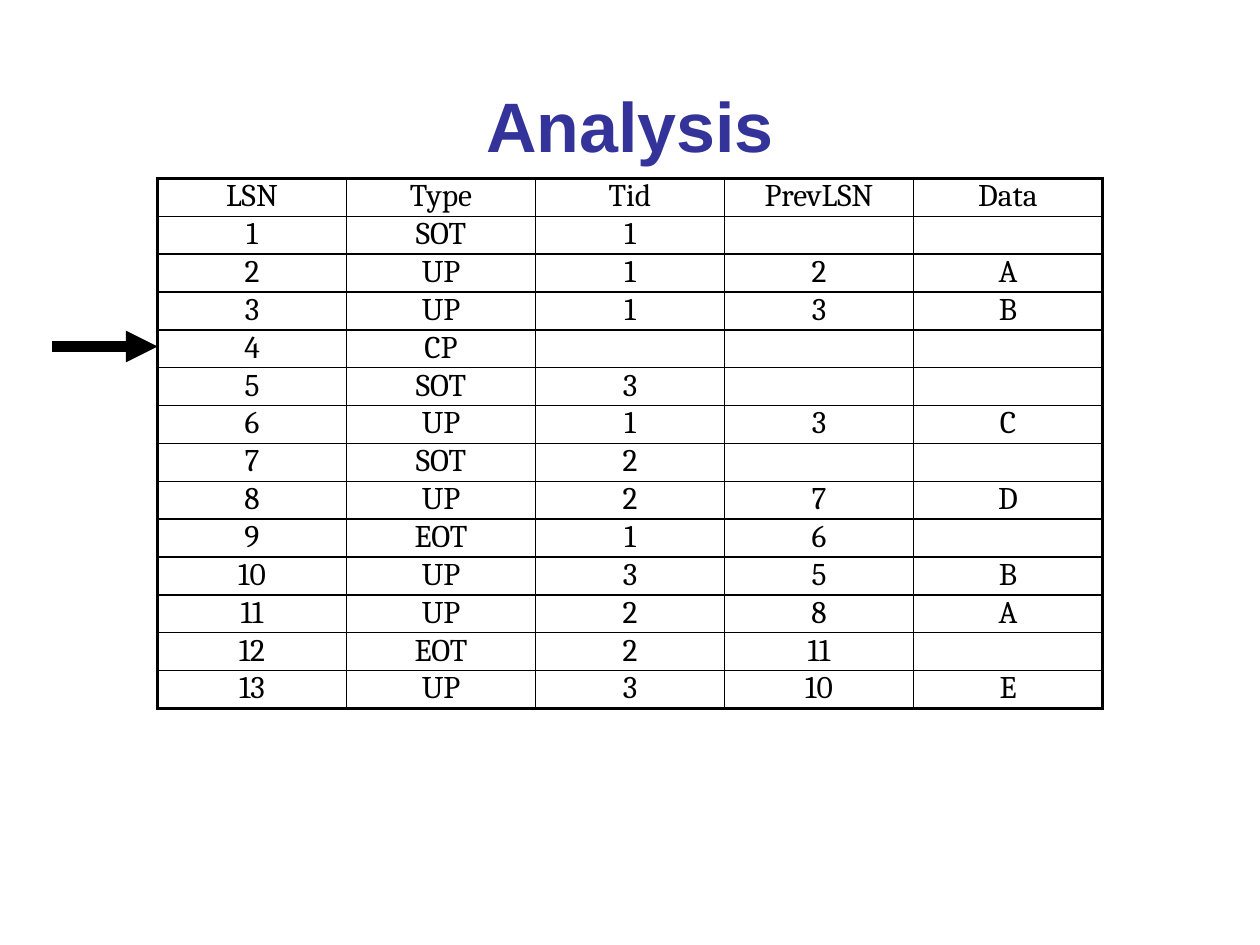
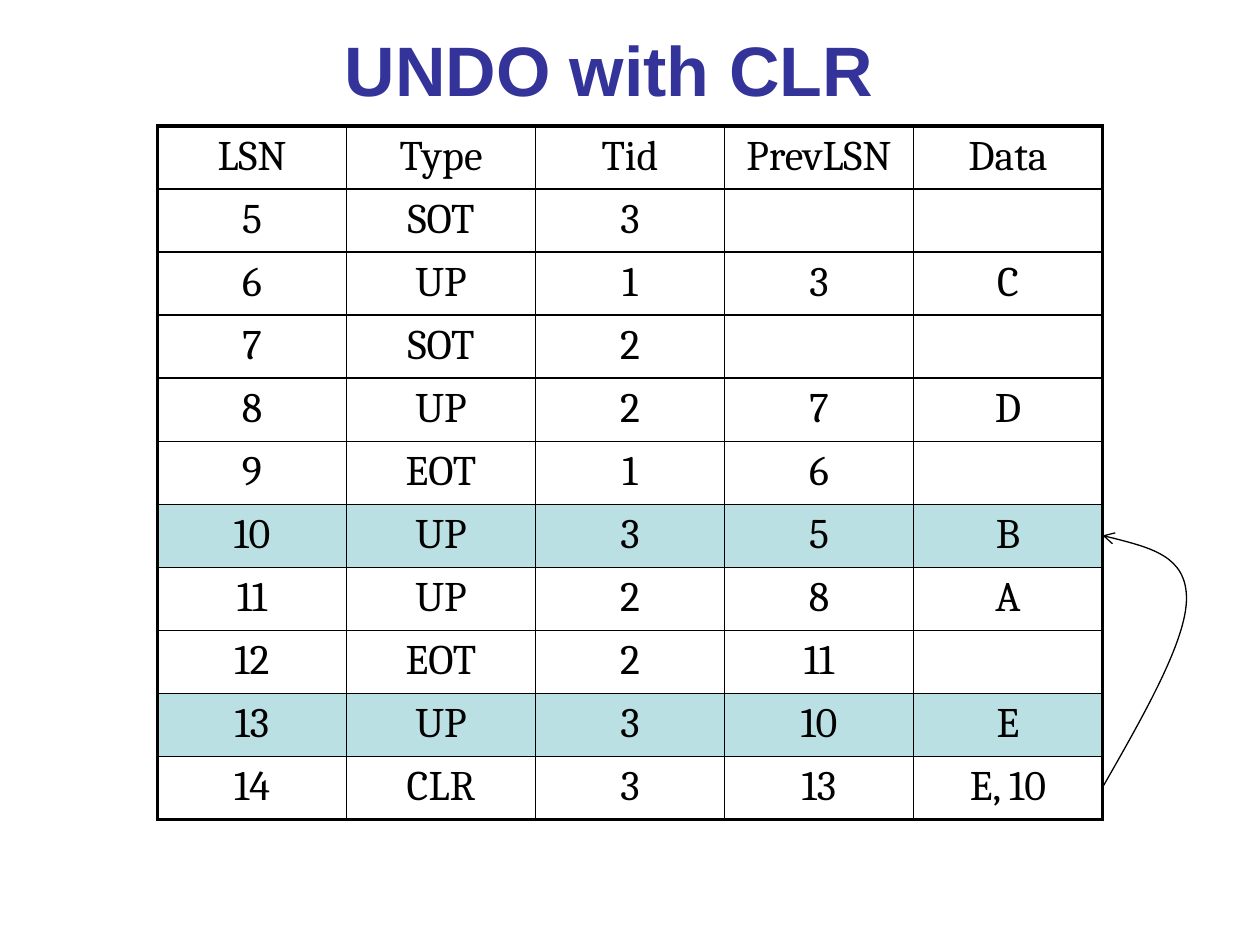
from lxml import etree
from pptx import Presentation
from pptx.dml.color import RGBColor
from pptx.enum.shapes import MSO_CONNECTOR
from pptx.enum.text import MSO_ANCHOR, PP_ALIGN
from pptx.oxml.ns import qn
from pptx.util import Pt

HEADER = ("LSN", "Type", "Tid", "PrevLSN", "Data")
LOG = [
    ("1", "SOT", "1", "", ""),
    ("2", "UP", "1", "2", "A"),
    ("3", "UP", "1", "3", "B"),
    ("4", "CP", "", "", ""),
    ("5", "SOT", "3", "", ""),
    ("6", "UP", "1", "3", "C"),
    ("7", "SOT", "2", "", ""),
    ("8", "UP", "2", "7", "D"),
    ("9", "EOT", "1", "6", ""),
    ("10", "UP", "3", "5", "B"),
    ("11", "UP", "2", "8", "A"),
    ("12", "EOT", "2", "11", ""),
    ("13", "UP", "3", "10", "E"),
]
COMPENSATION = ("14", "CLR", "3", "13", "E, 10")
CHECKPOINT = "4"
UNDONE = {"10", "13"}

BLACK = RGBColor(0x00, 0x00, 0x00)
WHITE = RGBColor(0xFF, 0xFF, 0xFF)
INDIGO = RGBColor(0x33, 0x33, 0x99)
PALE_TEAL = RGBColor(0xBB, 0xE0, 0xE3)
FILLS = {**dict.fromkeys(UNDONE, PALE_TEAL), COMPENSATION[0]: WHITE}

STRAIGHT = MSO_CONNECTOR.STRAIGHT
CENTER, MIDDLE = PP_ALIGN.CENTER, MSO_ANCHOR.MIDDLE
TITLE_FONT, LOG_FONT = "Arial", "Cambria"
TABLE_LEFT, COLUMN_WIDTH = 90, 108
TABLE_RIGHT = TABLE_LEFT + COLUMN_WIDTH * len(HEADER)
INNER, OUTER = 1, 2.25


def add_title(slide, text, left, top):
    box = slide.shapes.add_textbox(Pt(left), Pt(top), Pt(612), Pt(78))
    frame = box.text_frame
    frame.word_wrap = True
    frame.vertical_anchor = MIDDLE
    paragraph = frame.paragraphs[0]
    paragraph.alignment = CENTER
    run = paragraph.add_run()
    run.text = text
    run.font.name, run.font.size, run.font.bold = TITLE_FONT, Pt(40), True
    run.font.color.rgb = INDIGO


def set_borders(cell, widths):
    properties = cell._tc.get_or_add_tcPr()
    for side, width in widths.items():
        border = etree.SubElement(properties, qn(f"a:ln{side}"), w=str(Pt(width)))
        solid = etree.SubElement(border, qn("a:solidFill"))
        etree.SubElement(solid, qn("a:srgbClr"), val=str(BLACK))


def write_cell(cell, text, size):
    paragraph = cell.text_frame.paragraphs[0]
    paragraph.alignment = CENTER
    if text:
        run = paragraph.add_run()
        run.text = text
        run.font.name, run.font.size = LOG_FONT, Pt(size)
        run.font.color.rgb = BLACK
    else:
        end = etree.SubElement(paragraph._p, qn("a:endParaRPr"), sz=str(size * 100))
        etree.SubElement(end, qn("a:latin"), typeface=LOG_FONT)


def add_log(slide, entries, top, row_height, size, margins, fills):
    rows = [HEADER, *entries]
    last_row, last_column = len(rows) - 1, len(HEADER) - 1
    table = slide.shapes.add_table(
        len(rows), len(HEADER), Pt(TABLE_LEFT), Pt(top),
        Pt(TABLE_RIGHT - TABLE_LEFT), Pt(row_height * len(rows))).table
    table.first_row = table.horz_banding = False
    for column in table.columns:
        column.width = Pt(COLUMN_WIDTH)
    for r, entry in enumerate(rows):
        table.rows[r].height = Pt(row_height)
        for c, text in enumerate(entry):
            cell = table.cell(r, c)
            side_margin, end_margin = margins
            cell.margin_left = cell.margin_right = Pt(side_margin)
            cell.margin_top = cell.margin_bottom = Pt(end_margin)
            set_borders(cell, {
                "L": INNER if c else OUTER,
                "R": OUTER if c == last_column else INNER,
                "T": INNER if r else OUTER,
                "B": OUTER if r == last_row else INNER,
            })
            if entry[0] in fills:
                cell.fill.solid()
                cell.fill.fore_color.rgb = fills[entry[0]]
            else:
                cell.fill.background()
            write_cell(cell, text, size)


def style_arrow(arrow, width, head):
    arrow.line.color.rgb = BLACK
    arrow.line.width = Pt(width)
    etree.SubElement(arrow.line._get_or_add_ln(), qn("a:tailEnd"), type=head)


def add_pointer(slide, y):
    pointer = slide.shapes.add_connector(STRAIGHT, Pt(30), Pt(y), Pt(TABLE_LEFT), Pt(y))
    style_arrow(pointer, 6, "triangle")
    etree.SubElement(pointer._element.spPr, qn("a:effectLst"))


def add_undo_curve(slide, start, controls):
    builder = slide.shapes.build_freeform(Pt(start[0]), Pt(start[1]))
    builder.add_line_segments([(Pt(x), Pt(y)) for x, y in controls], close=False)
    curve = builder.convert_to_shape()
    segments = list(curve._element.iter(qn("a:lnTo")))
    for first in range(0, len(segments), 3):
        trio = segments[first:first + 3]
        bezier = etree.Element(qn("a:cubicBezTo"))
        trio[0].addprevious(bezier)
        for segment in trio:
            bezier.append(segment[0])
            segment.getparent().remove(segment)
    curve.shadow.inherit = False
    curve.fill.background()
    style_arrow(curve, 0.75, "arrow")


def main():
    deck = Presentation()
    deck.slide_width, deck.slide_height = Pt(720), Pt(540)
    blank = deck.slide_layouts[6]

    analysis = deck.slides.add_slide(blank)
    add_title(analysis, "Analysis", 54, 32.4)
    top, row_height = 102, 21.6
    add_log(analysis, LOG, top, row_height, 18, (3.6, 0), {})
    checkpoint_row = 1 + [entry[0] for entry in LOG].index(CHECKPOINT)
    add_pointer(analysis, top + row_height * (checkpoint_row + 0.5) - 1.2)

    undo = deck.slides.add_slide(blank)
    add_title(undo, "UNDO with CLR", 42, 0)
    add_log(undo, LOG[4:] + [COMPENSATION], 72, 34.85, 24, (7.2, 3.6), FILLS)
    bulge = TABLE_RIGHT + 48
    add_undo_curve(undo, (TABLE_RIGHT, 450), [
        (TABLE_RIGHT + 24, 408), (bulge, 366), (bulge, 342),
        (bulge, 318), (TABLE_RIGHT + 24, 312), (TABLE_RIGHT, 306)])

    deck.save("out.pptx")


if __name__ == "__main__":
    main()
